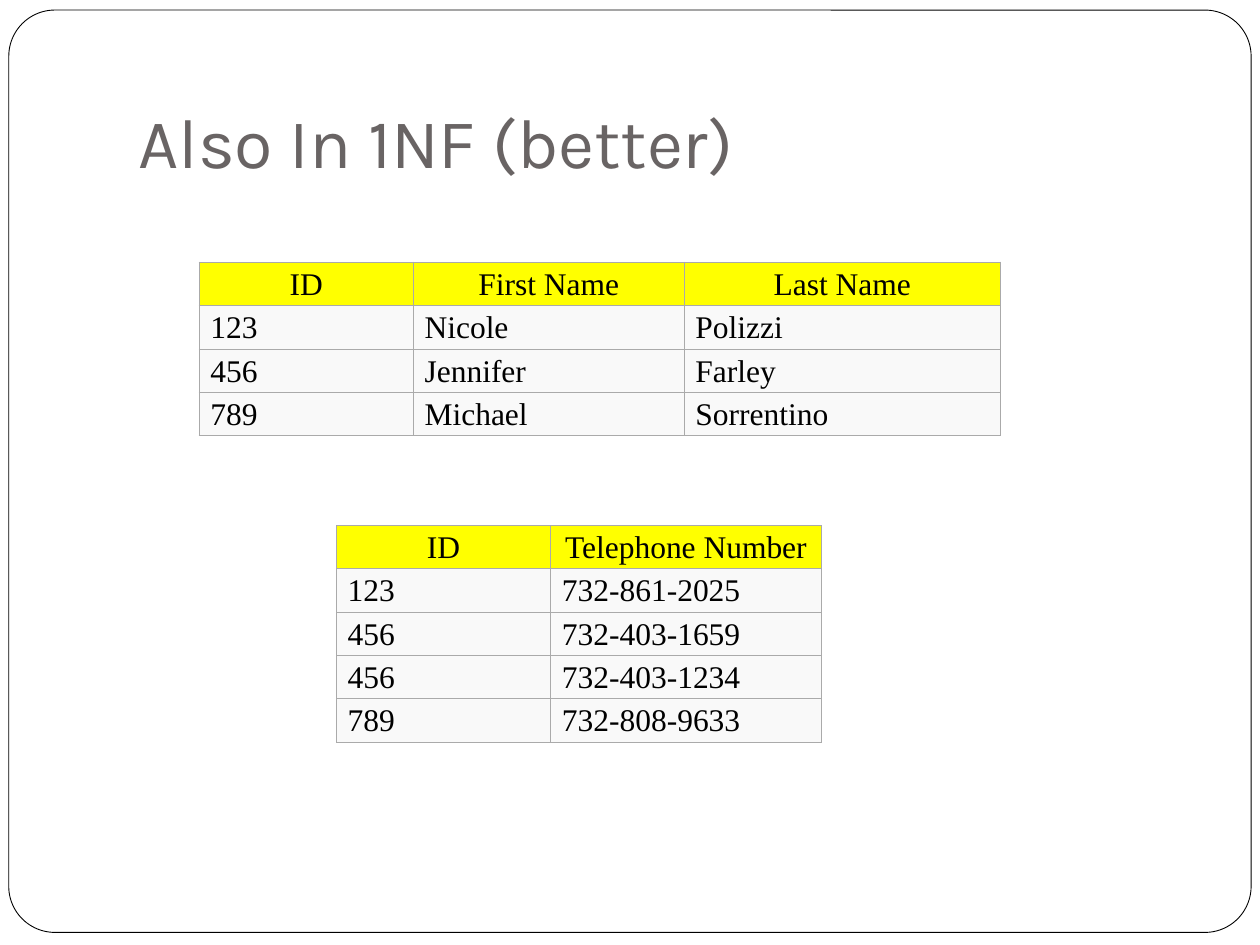
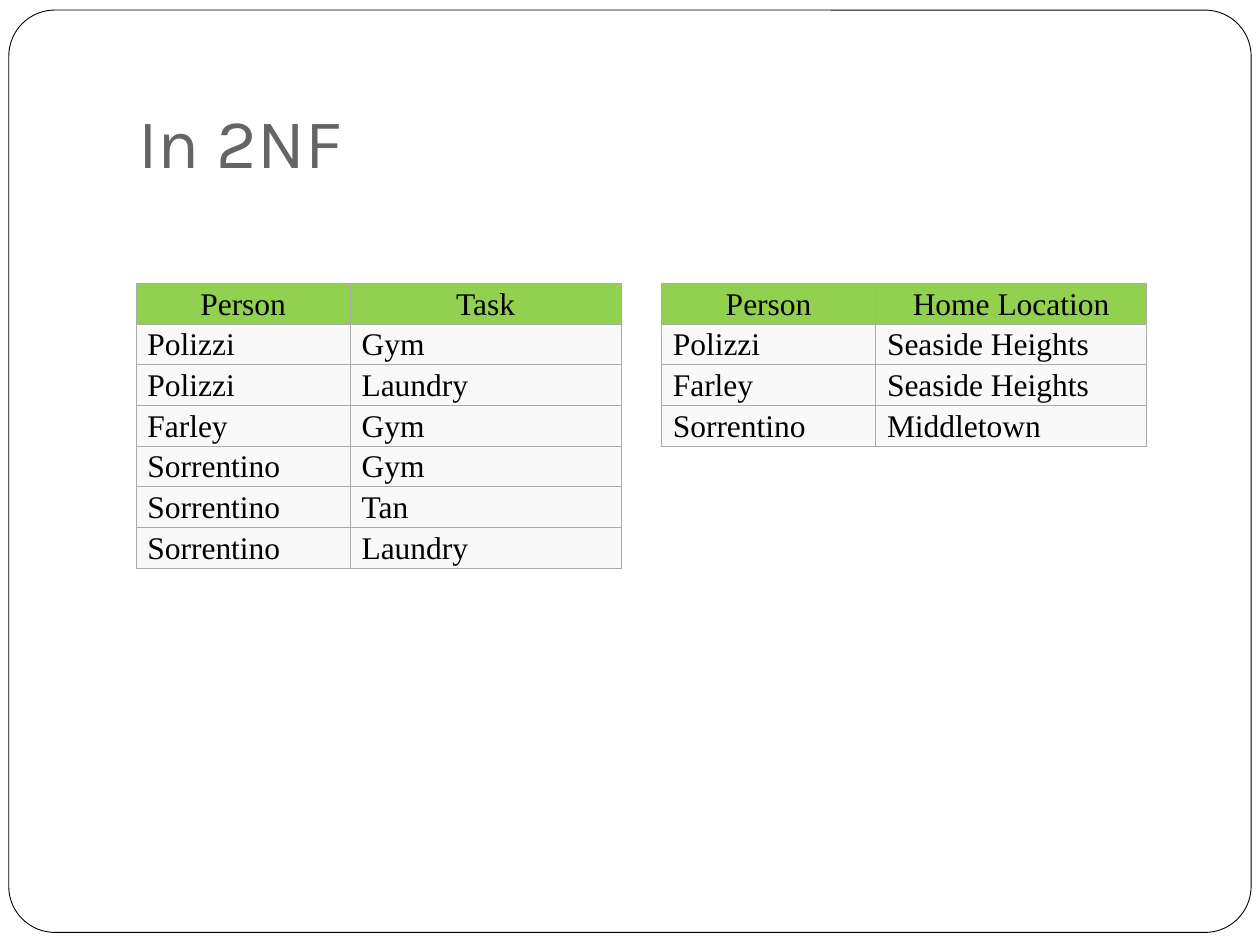
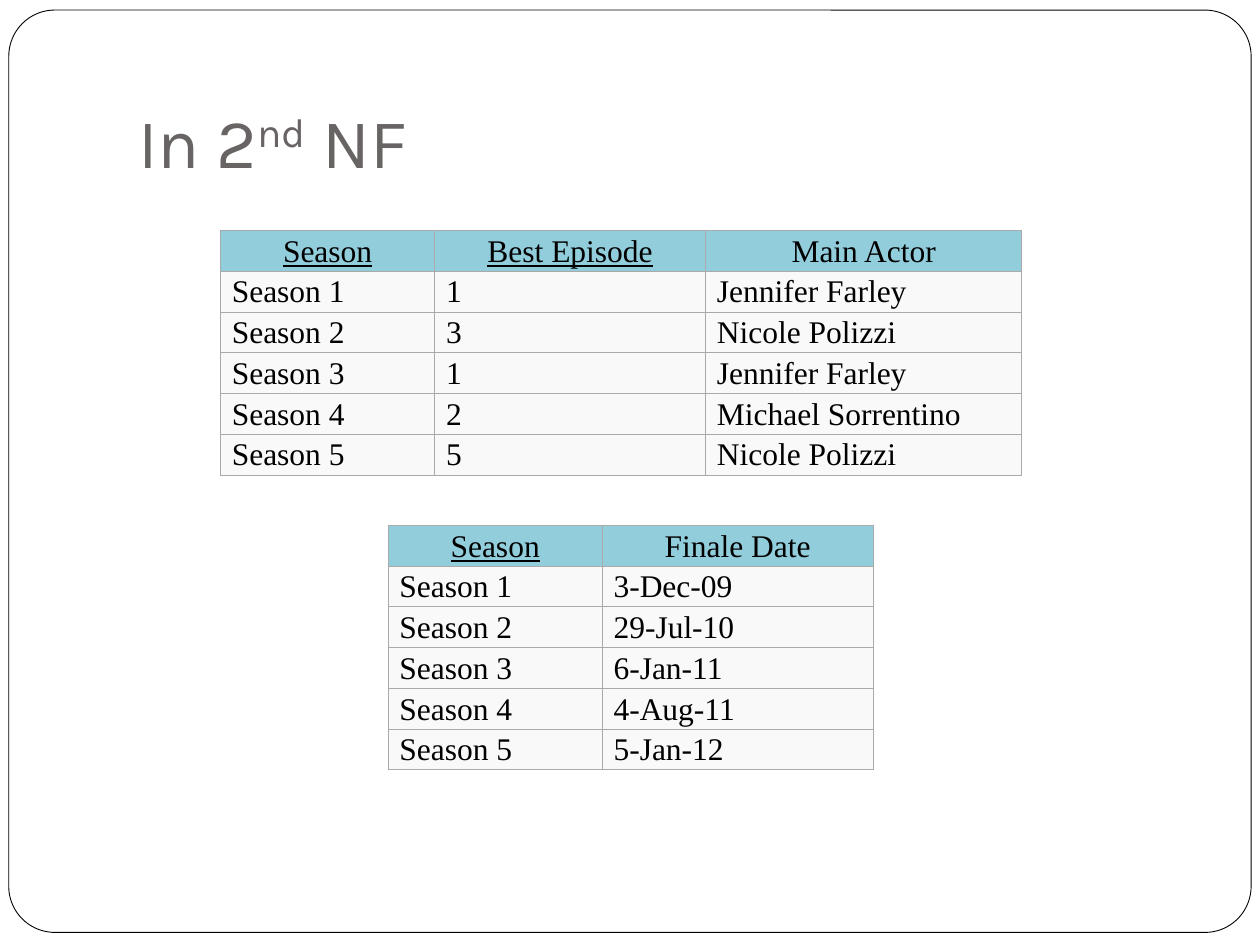
from dataclasses import dataclass

from lxml import etree
from pptx import Presentation
from pptx.dml.color import RGBColor
from pptx.enum.shapes import MSO_SHAPE
from pptx.enum.text import MSO_ANCHOR, PP_ALIGN
from pptx.oxml.ns import qn
from pptx.slide import Slide
from pptx.table import _Cell
from pptx.util import Inches, Pt

BLACK = RGBColor(0x00, 0x00, 0x00)
WHITE = RGBColor(0xFF, 0xFF, 0xFF)
TITLE_GRAY = RGBColor(0x69, 0x64, 0x64)
BODY_GRAY = RGBColor(0xF9, 0xF9, 0xF9)
BORDER_GRAY = RGBColor(0xAA, 0xAA, 0xAA)
YELLOW = RGBColor(0xFF, 0xFF, 0x00)
GREEN = RGBColor(0x92, 0xD0, 0x50)
TEAL = RGBColor(0x92, 0xCD, 0xDC)

TITLE_FONT = "Karla"
TABLE_FONT = "Times New Roman"
COLUMN_WIDTHS = (Inches(1.7), Inches(2.15), Inches(2.51))


@dataclass(frozen=True)
class Relation:
    left: float
    top: float
    height: float
    rows: list[tuple[str, ...]]
    key_columns: int = 0


@dataclass(frozen=True)
class NormalForm:
    title: list[str]
    header_color: RGBColor
    relations: list[Relation]


NORMAL_FORMS = [
    NormalForm(["Also In 1NF (better)"], YELLOW, [
        Relation(1.58, 2.08, 1.38, [
            ("ID", "First Name", "Last Name"),
            ("123", "Nicole", "Polizzi"),
            ("456", "Jennifer", "Farley"),
            ("789", "Michael", "Sorrentino"),
        ]),
        Relation(2.67, 4.17, 1.72, [
            ("ID", "Telephone Number"),
            ("123", "732-861-2025"),
            ("456", "732-403-1659"),
            ("456", "732-403-1234"),
            ("789", "732-808-9633"),
        ]),
    ]),
    NormalForm(["In 2NF"], GREEN, [
        Relation(1.08, 2.25, 2.26, [
            ("Person", "Task"),
            ("Polizzi", "Gym"),
            ("Polizzi", "Laundry"),
            ("Farley", "Gym"),
            ("Sorrentino", "Gym"),
            ("Sorrentino", "Tan"),
            ("Sorrentino", "Laundry"),
        ]),
        Relation(5.25, 2.25, 1.29, [
            ("Person", "Home Location"),
            ("Polizzi", "Seaside Heights"),
            ("Farley", "Seaside Heights"),
            ("Sorrentino", "Middletown"),
        ]),
    ]),
    NormalForm(["In 2", "nd", " NF"], TEAL, [
        Relation(1.75, 1.83, 1.94, [
            ("Season", "Best Episode", "Main Actor"),
            ("Season 1", "1", "Jennifer Farley"),
            ("Season 2", "3", "Nicole Polizzi"),
            ("Season 3", "1", "Jennifer Farley"),
            ("Season 4", "2", "Michael Sorrentino"),
            ("Season 5", "5", "Nicole Polizzi"),
        ], key_columns=2),
        Relation(3.08, 4.17, 1.94, [
            ("Season", "Finale Date"),
            ("Season 1", "3-Dec-09"),
            ("Season 2", "29-Jul-10"),
            ("Season 3", "6-Jan-11"),
            ("Season 4", "4-Aug-11"),
            ("Season 5", "5-Jan-12"),
        ], key_columns=1),
    ]),
]


def add_frame(slide: Slide) -> None:
    frame = slide.shapes.add_shape(
        MSO_SHAPE.ROUNDED_RECTANGLE, Inches(0.07), Inches(0.08), Inches(9.86), Inches(7.32))
    frame.adjustments[0] = 0.05
    frame.shadow.inherit = False
    frame.fill.solid()
    frame.fill.fore_color.rgb = WHITE
    frame.line.color.rgb = BLACK
    frame.line.width = Pt(0.5)


def add_title(slide: Slide, parts: list[str]) -> None:
    """Write the title; every second part is superscript."""
    title = slide.shapes.add_textbox(
        Inches(1), Inches(0.3), Inches(8.5), Inches(1.25)).text_frame
    title.word_wrap = True
    title.vertical_anchor = MSO_ANCHOR.BOTTOM
    title.margin_bottom = Inches(0.1)
    heading = title.paragraphs[0]
    heading.font.name = TITLE_FONT
    heading.font.size = Pt(40)
    heading.font.color.rgb = TITLE_GRAY
    for index, part in enumerate(parts):
        run = heading.add_run()
        run.text = part
        if index % 2:
            run._r.get_or_add_rPr().set("baseline", "30000")


def set_borders(cell: _Cell) -> None:
    properties = cell._tc.get_or_add_tcPr()
    for position, side in enumerate(("a:lnL", "a:lnR", "a:lnT", "a:lnB")):
        border = etree.Element(qn(side), w=str(Pt(0.5)))
        fill = etree.SubElement(border, qn("a:solidFill"))
        etree.SubElement(fill, qn("a:srgbClr"), val=str(BORDER_GRAY))
        properties.insert(position, border)


def fill_cell(cell: _Cell, text: str, color: RGBColor, is_header: bool, is_key: bool) -> None:
    cell.text = text
    cell.vertical_anchor = MSO_ANCHOR.MIDDLE
    cell.margin_left = Inches(0.01 if is_header else 0.09)
    cell.margin_right = cell.margin_top = Inches(0.01)
    cell.margin_bottom = 0
    cell.fill.solid()
    cell.fill.fore_color.rgb = color
    set_borders(cell)
    entry = cell.text_frame.paragraphs[0]
    entry.alignment = PP_ALIGN.CENTER if is_header else PP_ALIGN.LEFT
    entry.font.name = TABLE_FONT
    entry.font.size = Pt(18)
    entry.font.color.rgb = BLACK
    if is_key:
        entry.font.underline = True


def add_relation(slide: Slide, relation: Relation, header_color: RGBColor) -> None:
    widths = COLUMN_WIDTHS[:len(relation.rows[0])]
    table = slide.shapes.add_table(
        len(relation.rows), len(widths), Inches(relation.left), Inches(relation.top),
        sum(widths), Inches(relation.height)).table
    table.first_row = table.horz_banding = False
    for column, width in zip(table.columns, widths):
        column.width = width
    for row, values in enumerate(relation.rows):
        is_header = row == 0
        for column, value in enumerate(values):
            fill_cell(table.cell(row, column), value,
                      header_color if is_header else BODY_GRAY,
                      is_header, is_header and column < relation.key_columns)


def main() -> None:
    presentation = Presentation()
    presentation.slide_width = Inches(10)
    presentation.slide_height = Inches(7.5)
    blank = presentation.slide_layouts[6]
    for form in NORMAL_FORMS:
        slide = presentation.slides.add_slide(blank)
        add_frame(slide)
        add_title(slide, form.title)
        for relation in form.relations:
            add_relation(slide, relation, form.header_color)
    presentation.save("out.pptx")


if __name__ == "__main__":
    main()
